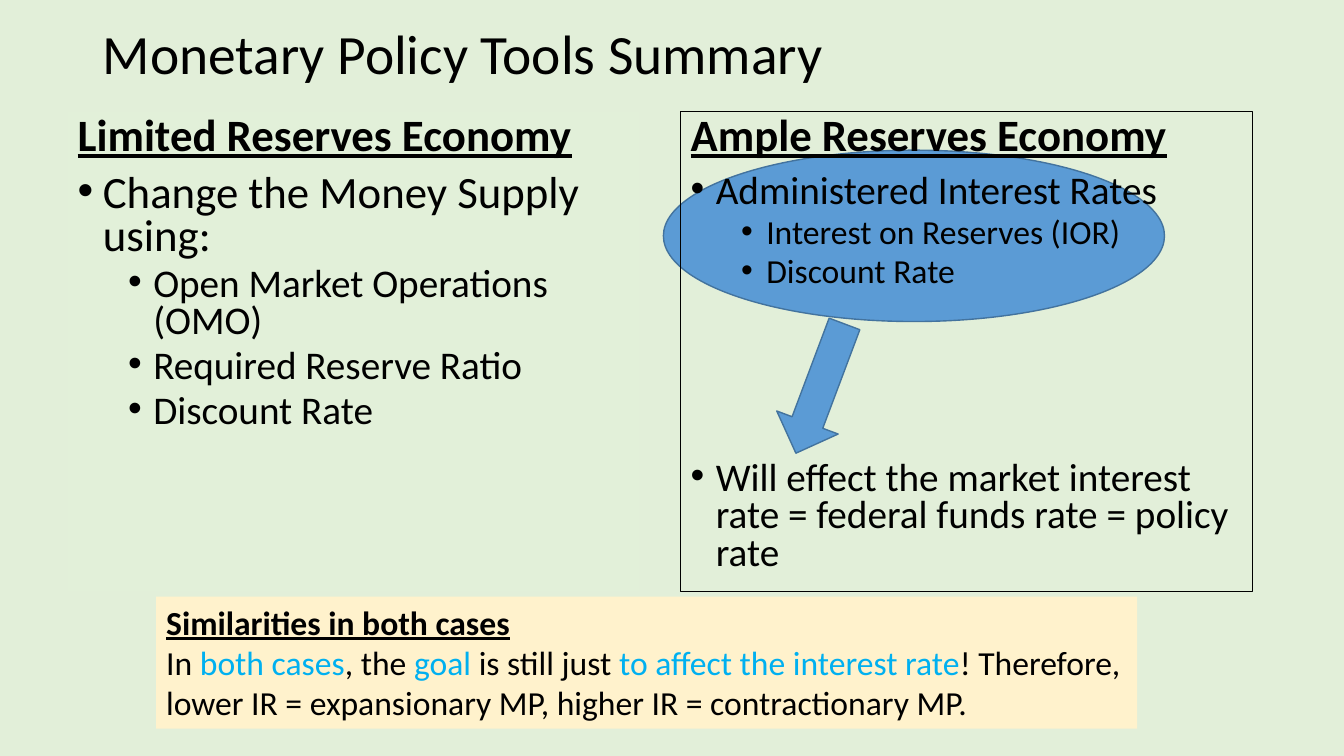
"""Build the monetary policy tools summary slide."""
import lxml.etree
import pptx
import pptx.dml.color
import pptx.enum.shapes
import pptx.enum.text
import pptx.oxml.ns
import pptx.util

Inches = pptx.util.Inches
SHAPES = pptx.enum.shapes.MSO_SHAPE
COLORS = {
    "background": "E2EFD9", "panel": "E2F0D9", "note": "FFF2CC", "text": "000000",
    "highlight": "00B0F0", "blue": "5B9BD5", "blue_line": "43739E",
}
FONT = "Calibri"
TITLE = "Monetary Policy Tools Summary"
HEADING = {"size": 32, "bold": True, "underline": True}
COLUMNS = [
    {"left": 0.67, "fill": "panel", "line": None, "items": [
        ("Limited Reserves Economy", None, HEADING),
        ("Change the Money Supply using:", 0, {"size": 32}),
        ("Open Market Operations (OMO)", 1, {"size": 28}),
        ("Required Reserve Ratio", 1, {"size": 28}),
        ("Discount Rate", 1, {"size": 28}),
    ]},
    {"left": 6.75, "fill": None, "line": "text", "items": [
        ("Ample Reserves Economy", None, HEADING),
        ("Administered Interest Rates", 0, {"size": 28}),
        ("Interest on Reserves (IOR)", 1, {"size": 24}),
        ("Discount Rate", 1, {"size": 24}),
        ("Will effect the market interest rate = federal funds rate = policy rate",
         0, {"size": 28, "before": 122}),
    ]},
]
NOTE_HEADING = "Similarities in both cases"
NOTE_RUNS = [
    ("In ", "text"), ("both cases", "highlight"), (", the ", "text"),
    ("goal", "highlight"), (" is still just ", "text"),
    ("to affect the interest rate", "highlight"),
    ("! Therefore, lower IR = expansionary MP, higher IR = contractionary MP.", "text"),
]


def rgb(name):
    """Return the named colour."""
    return pptx.dml.color.RGBColor.from_string(COLORS[name])


def write(paragraph, text, size=24, bold=False, underline=False, color="text"):
    """Append a formatted run to a paragraph."""
    run = paragraph.add_run()
    run.text = text
    run.font.name = FONT
    run.font.size = pptx.util.Pt(size)
    run.font.bold = bold
    run.font.underline = underline
    run.font.color.rgb = rgb(color)


def place(shape, left, top, width, height):
    """Move and size a shape in inches."""
    shape.left, shape.top = Inches(left), Inches(top)
    shape.width, shape.height = Inches(width), Inches(height)


def paint(shape, fill=None, line=None, weight=1):
    """Set the fill and outline of a shape."""
    if fill:
        shape.fill.solid()
        shape.fill.fore_color.rgb = rgb(fill)
    else:
        shape.fill.background()
    if line:
        shape.line.color.rgb = rgb(line)
        shape.line.width = pptx.util.Pt(weight)
    else:
        shape.line.fill.background()


def add_shape(slide, kind, box, fill, line=None):
    """Add a painted preset shape without a shadow."""
    shape = slide.shapes.add_shape(kind, *map(Inches, box))
    shape.shadow.inherit = False
    paint(shape, fill, line)
    return shape


def set_bullet(paragraph, level):
    """Set the indent and bullet of a paragraph; None means a plain heading."""
    properties = paragraph._p.get_or_add_pPr()
    qualify = pptx.oxml.ns.qn
    if level is None:
        properties.set("marL", "0")
        properties.set("indent", "0")
        lxml.etree.SubElement(properties, qualify("a:buNone"))
        return
    paragraph.level = level
    properties.set("marL", str(Inches(0.25 + 0.5 * level)))
    properties.set("indent", str(Inches(-0.25)))
    lxml.etree.SubElement(properties, qualify("a:buFont"), typeface="Arial")
    lxml.etree.SubElement(properties, qualify("a:buChar"), char="•")


def fill_column(body, column):
    """Place one column and write its heading and list."""
    place(body, column["left"], 1.11, 5.67, 4.76)
    paint(body, column["fill"], column["line"], 0.75)
    frame = body.text_frame
    frame.auto_size = pptx.enum.text.MSO_AUTO_SIZE.NONE
    for index, (text, level, style) in enumerate(column["items"]):
        paragraph = frame.add_paragraph() if index else frame.paragraphs[0]
        set_bullet(paragraph, level)
        style = dict(style)
        before = style.pop("before", 5 if level else 10)
        paragraph.space_before = pptx.util.Pt(before if index else 0)
        paragraph.line_spacing = 0.8
        write(paragraph, text, **style)


def add_note(slide):
    """Add the box on what both cases share."""
    note = add_shape(slide, SHAPES.RECTANGLE, (1.55, 5.92, 9.73, 1.31), "note")
    frame = note.text_frame
    frame.word_wrap = True
    frame.vertical_anchor = pptx.enum.text.MSO_ANCHOR.TOP
    frame.auto_size = pptx.enum.text.MSO_AUTO_SIZE.SHAPE_TO_FIT_TEXT
    heading, sentence = frame.paragraphs[0], frame.add_paragraph()
    for paragraph in (heading, sentence):
        paragraph.alignment = pptx.enum.text.PP_ALIGN.LEFT
    write(heading, NOTE_HEADING, bold=True, underline=True)
    for text, color in NOTE_RUNS:
        write(sentence, text, color=color)


def main():
    """Build and save the presentation."""
    presentation = pptx.Presentation()
    presentation.slide_width, presentation.slide_height = Inches(13.33), Inches(7.5)
    slide = presentation.slides.add_slide(presentation.slide_layouts[3])
    slide.background.fill.solid()
    slide.background.fill.fore_color.rgb = rgb("background")

    title = slide.shapes.title
    place(title, 0.92, 0.21, 11.5, 0.71)
    title.text_frame.auto_size = pptx.enum.text.MSO_AUTO_SIZE.NONE
    title.text_frame.vertical_anchor = pptx.enum.text.MSO_ANCHOR.MIDDLE
    paragraph = title.text_frame.paragraphs[0]
    paragraph.alignment = pptx.enum.text.PP_ALIGN.LEFT
    paragraph.line_spacing = 0.9
    write(paragraph, TITLE, size=39.6)

    for number, column in enumerate(COLUMNS, 1):
        fill_column(slide.placeholders[number], column)

    ellipse = add_shape(slide, SHAPES.OVAL, (6.58, 1.49, 4.97, 1.7), "blue", "blue_line")
    title.element.addprevious(ellipse.element)
    arrow = add_shape(slide, SHAPES.DOWN_ARROW, (7.81, 3.17, 0.65, 1.37), "blue", "blue_line")
    arrow.rotation = 20.6
    add_note(slide)
    presentation.save("out.pptx")


if __name__ == "__main__":
    main()
